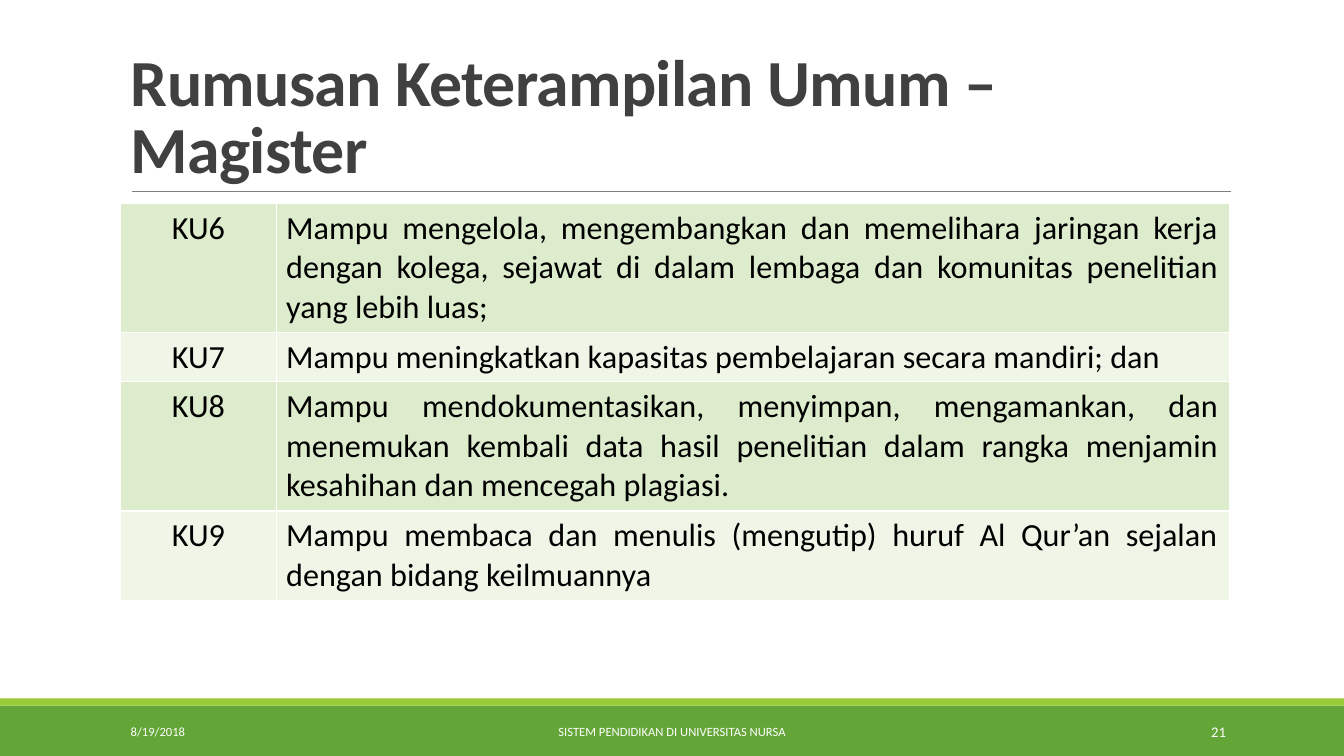
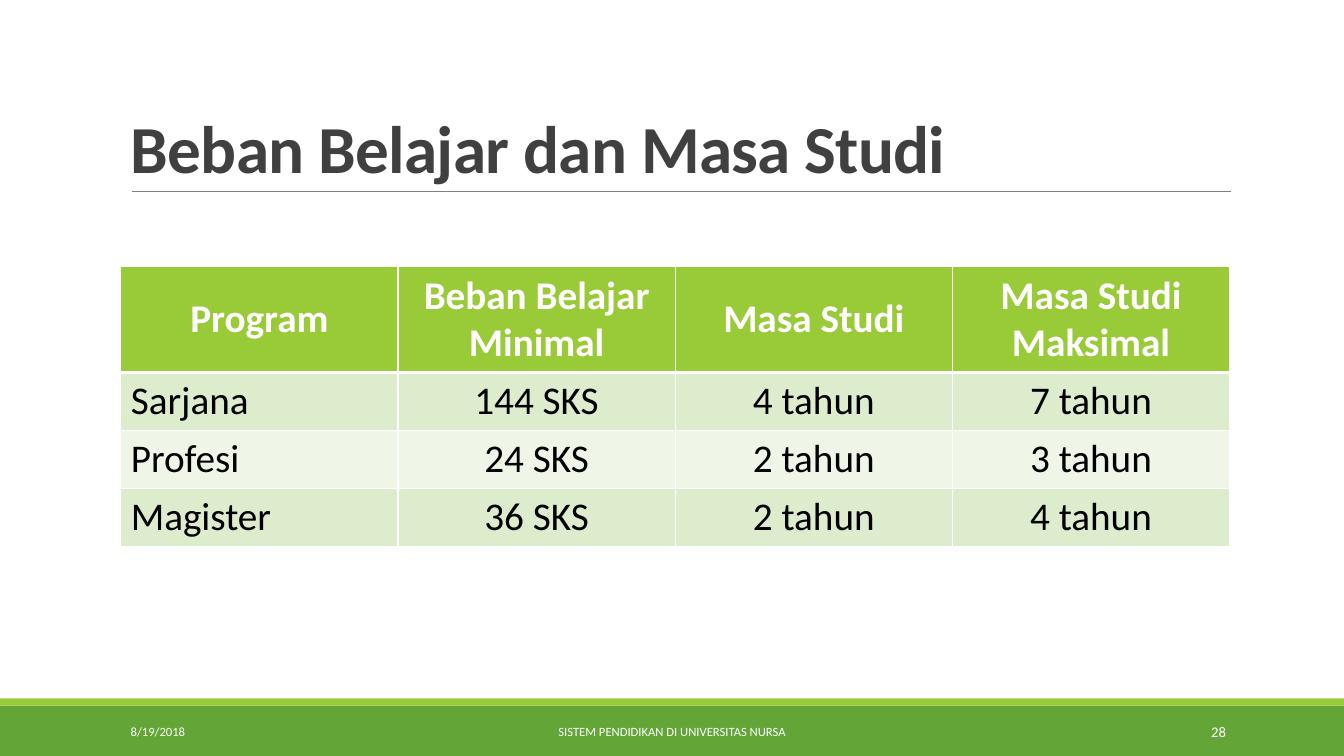
from lxml import etree
from pptx import Presentation
from pptx import util as u
from pptx.dml.color import RGBColor
from pptx.enum import shapes, text
from pptx.oxml.ns import qn

PX = 9525  # EMU per px, 96 px to the inch
WIDTH, HEIGHT = 1280, 720
FONT = "Calibri"
WHITE = RGBColor(0xFF, 0xFF, 0xFF)
BLACK = RGBColor(0x00, 0x00, 0x00)
GREEN = RGBColor(0x63, 0xA5, 0x37)
LIME = RGBColor(0x99, 0xCB, 0x38)
TITLE_GREY = RGBColor(0x40, 0x40, 0x40)
RULE_GREY = RGBColor(0x80, 0x80, 0x80)
ROW_FILLS = RGBColor(0xDE, 0xEC, 0xCE), RGBColor(0xEF, 0xF6, 0xE8)
LEFT, CENTER, RIGHT, JUSTIFY = (
    text.PP_ALIGN.LEFT, text.PP_ALIGN.CENTER, text.PP_ALIGN.RIGHT, text.PP_ALIGN.JUSTIFY)

CONTENT_LEFT, CONTENT_WIDTH = 115, 1056
TITLE_TOP, TITLE_HEIGHT = 30, 153
RULE_LEFT, RULE_RIGHT, RULE_Y = 126, 1172, 182
BANDS = [(672, 48, GREEN), (665, 7, LIME)]  # top, height, colour
FOOTER_TOP, FOOTER_HEIGHT = 678, 38
DATE = "8/19/2018"
FOOTER = "SISTEM PENDIDIKAN DI UNIVERSITAS NURSA"

SLIDES = [
    {
        "title": "Rumusan Keterampilan Umum – Magister",
        "title_size": 47,
        "number": "21",
        "top": 194,
        "columns": [148, 908],
        "row_heights": [122, 47, 123, 85],
        "size": 23,
        "aligns": [CENTER, JUSTIFY],
        "header": None,
        "rows": [
            ("KU6", "Mampu mengelola, mengembangkan dan memelihara jaringan kerja dengan "
                    "kolega, sejawat di dalam lembaga dan komunitas penelitian yang lebih luas;"),
            ("KU7", "Mampu meningkatkan kapasitas pembelajaran secara mandiri; dan"),
            ("KU8", "Mampu mendokumentasikan, menyimpan, mengamankan, dan menemukan kembali "
                    "data hasil penelitian dalam rangka menjamin kesahihan dan mencegah plagiasi."),
            ("KU9", "Mampu membaca dan menulis (mengutip) huruf Al Qur’an sejalan dengan "
                    "bidang keilmuannya"),
        ],
    },
    {
        "title": "Beban Belajar dan Masa Studi",
        "title_size": 48,
        "number": "28",
        "top": 254,
        "columns": [CONTENT_WIDTH // 4] * 4,
        "row_heights": [100, 55, 55, 55],
        "size": 28,
        "aligns": [LEFT, CENTER, CENTER, CENTER],
        "header": ("Program", "Beban Belajar Minimal", "Masa Studi", "Masa Studi Maksimal"),
        "rows": [
            ("Sarjana", "144 SKS", "4 tahun", "7 tahun"),
            ("Profesi", "24 SKS", "2 tahun", "3 tahun"),
            ("Magister", "36 SKS", "2 tahun", "4 tahun"),
        ],
    },
]


def px(*lengths):
    return [u.Emu(length * PX) for length in lengths]


def style(paragraph, size, color, align=LEFT, bold=False):
    paragraph.alignment = align
    font = paragraph.font
    font.name, font.size, font.bold = FONT, u.Pt(size), bold
    font.color.rgb = color


def add_bands_and_rule(slide):
    for top, height, color in BANDS:
        band = slide.shapes.add_shape(
            shapes.MSO_SHAPE.RECTANGLE, *px(0, top, WIDTH, height))
        band.shadow.inherit = False
        band.fill.solid()
        band.fill.fore_color.rgb = color
        band.line.fill.background()
    rule = slide.shapes.add_connector(
        shapes.MSO_CONNECTOR.STRAIGHT, *px(RULE_LEFT, RULE_Y, RULE_RIGHT, RULE_Y))
    rule.line.color.rgb = RULE_GREY
    rule.line.width = u.Pt(0.5)
    etree.SubElement(rule._element.spPr, qn("a:effectLst"))


def set_title(slide, wording, size):
    title = slide.shapes.title
    title.left, title.top, title.width, title.height = px(
        CONTENT_LEFT, TITLE_TOP, CONTENT_WIDTH, TITLE_HEIGHT)
    frame = title.text_frame
    frame.text = wording
    frame.auto_size = text.MSO_AUTO_SIZE.NONE
    frame.vertical_anchor = text.MSO_ANCHOR.BOTTOM
    paragraph = frame.paragraphs[0]
    style(paragraph, size, TITLE_GREY, bold=True)
    paragraph.line_spacing = 0.85
    paragraph.runs[0]._r.get_or_add_rPr().set("spc", "-50")


def add_footers(slide, number):
    for left, width, wording, size, align in [
        (CONTENT_LEFT, 259, DATE, 9, LEFT),
        (387, 506, FOOTER, 9, CENTER),
        (1040, 137, number, 10.5, RIGHT),
    ]:
        box = slide.shapes.add_textbox(*px(left, FOOTER_TOP, width, FOOTER_HEIGHT))
        frame = box.text_frame
        frame.word_wrap = True
        frame.vertical_anchor = text.MSO_ANCHOR.MIDDLE
        frame.text = wording
        style(frame.paragraphs[0], size, WHITE, align)


def set_borders(cell, top, bottom):
    """Draw white cell borders, 1 pt at the sides; call before the fill is set."""
    properties = cell._tc.get_or_add_tcPr()
    for tag, points in (("lnL", 1), ("lnR", 1), ("lnT", top), ("lnB", bottom)):
        border = etree.SubElement(properties, qn(f"a:{tag}"), w=str(u.Pt(points)))
        fill = etree.SubElement(border, qn("a:solidFill"))
        etree.SubElement(fill, qn("a:srgbClr"), val=str(WHITE))


def add_content_table(slide, content):
    header = content["header"]
    rows = ([header] if header else []) + content["rows"]
    first_body = 1 if header else 0
    table = slide.shapes.add_table(
        len(rows), len(content["columns"]),
        *px(CONTENT_LEFT, content["top"], CONTENT_WIDTH, sum(content["row_heights"]))).table
    table.first_row = bool(header)
    table.horz_banding = False
    for column, width in zip(table.columns, content["columns"]):
        column.width = u.Emu(width * PX)
    for index, (row, height, wordings) in enumerate(
            zip(table.rows, content["row_heights"], rows)):
        row.height = u.Emu(height * PX)
        is_header = index < first_body
        for cell, wording, align in zip(row.cells, wordings, content["aligns"]):
            set_borders(cell, top=3 if header and index == first_body else 1,
                        bottom=3 if is_header else 1)
            cell.fill.solid()
            cell.fill.fore_color.rgb = LIME if is_header else ROW_FILLS[(index - first_body) % 2]
            cell.text = wording
            paragraph = cell.text_frame.paragraphs[0]
            if is_header:
                cell.vertical_anchor = text.MSO_ANCHOR.MIDDLE
                style(paragraph, content["size"], WHITE, CENTER, bold=True)
            else:
                style(paragraph, content["size"], BLACK, align)


def main():
    presentation = Presentation()
    presentation.slide_width, presentation.slide_height = px(WIDTH, HEIGHT)
    title_only = presentation.slide_layouts[5]
    for content in SLIDES:
        slide = presentation.slides.add_slide(title_only)
        add_bands_and_rule(slide)
        set_title(slide, content["title"], content["title_size"])
        add_content_table(slide, content)
        add_footers(slide, content["number"])
    presentation.save("out.pptx")


if __name__ == "__main__":
    main()
